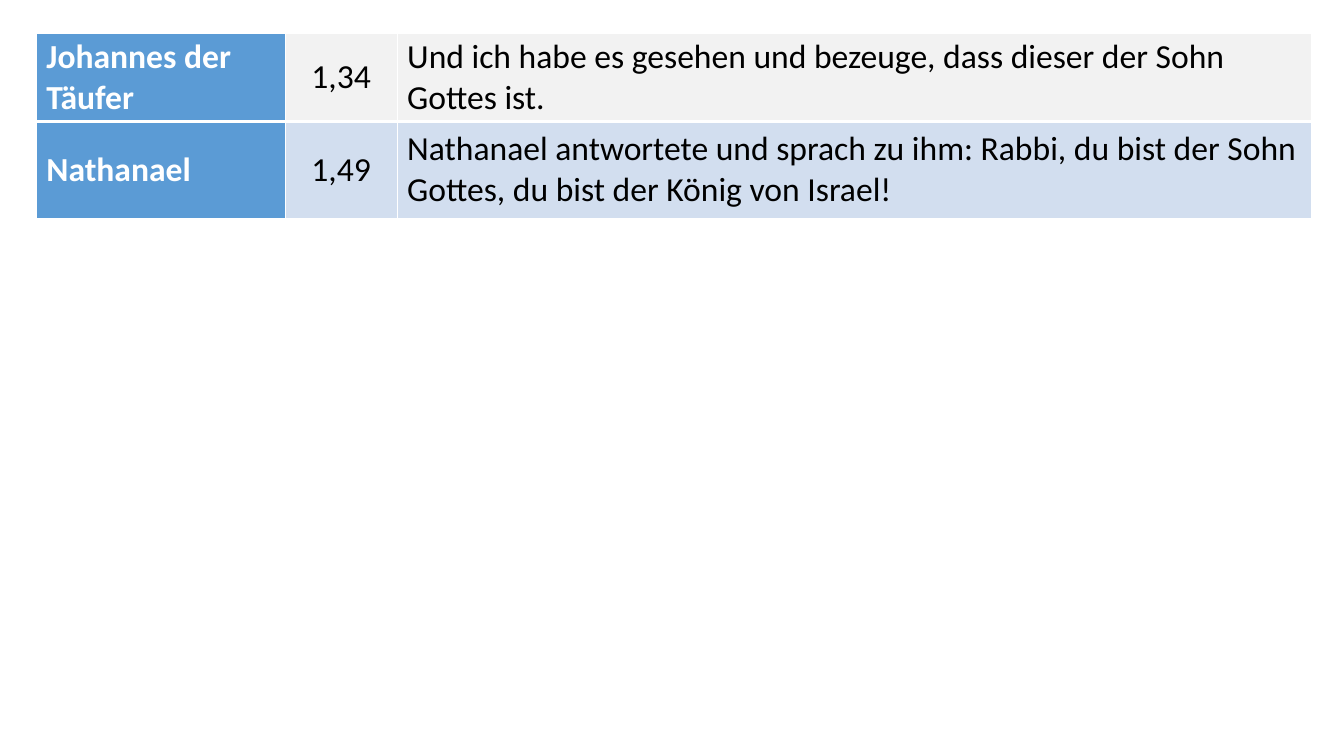
from lxml import etree
from pptx import Presentation
from pptx.dml.color import RGBColor
from pptx.enum.text import MSO_ANCHOR, PP_ALIGN
from pptx.oxml.ns import qn
from pptx.util import Cm, Pt

MIDDLE = MSO_ANCHOR.MIDDLE
LEFT, CENTER = PP_ALIGN.LEFT, PP_ALIGN.CENTER

WHITE, BLACK = "FFFFFF", "000000"
SPEAKER_FILL = "5B9BD5"
ROW_FILLS = ["F2F2F2", "D2DEEF"]
COLUMN_SHARES = [0.195, 0.088, 0.717]
ROW_SHARES = [0.475, 0.525]

TESTIMONIES = [
    ("Johannes der Täufer", "1,34",
     "Und ich habe es gesehen und bezeuge, dass dieser der Sohn Gottes ist."),
    ("Nathanael", "1,49",
     "Nathanael antwortete und sprach zu ihm: Rabbi, du bist der Sohn Gottes, "
     "du bist der König von Israel!"),
]


def rgb(value):
    return RGBColor.from_string(value)


def set_borders(cell, top, bottom):
    """Draw white cell edges: 1 pt at the sides, the given points above and below."""
    properties = cell._tc.get_or_add_tcPr()
    for edge, points in (("L", 1), ("R", 1), ("T", top), ("B", bottom)):
        line = etree.SubElement(properties, qn(f"a:ln{edge}"), w=str(Pt(points)))
        line_fill = etree.SubElement(line, qn("a:solidFill"))
        etree.SubElement(line_fill, qn("a:srgbClr"), val=WHITE)


def fill_cell(cell, content, fill, color, bold, alignment):
    cell.fill.solid()
    cell.fill.fore_color.rgb = rgb(fill)
    cell.vertical_anchor = MIDDLE
    cell.margin_left = cell.margin_right = Cm(0.25)
    cell.margin_top = cell.margin_bottom = 0
    paragraph = cell.text_frame.paragraphs[0]
    paragraph.text = content
    paragraph.alignment = alignment
    font = paragraph.runs[0].font
    font.name, font.size, font.bold = "Calibri", Pt(24), bold
    font.color.rgb = rgb(color)


def add_testimony_table(slide, left, top, width, height):
    table = slide.shapes.add_table(
        len(TESTIMONIES), len(COLUMN_SHARES), left, top, width, height).table
    for column, share in zip(table.columns, COLUMN_SHARES):
        column.width = round(width * share)
    for row, share in zip(table.rows, ROW_SHARES):
        row.height = round(height * share)

    for index, (testimony, row_fill) in enumerate(zip(TESTIMONIES, ROW_FILLS)):
        is_first = index == 0
        speaker, verse, quote = table.rows[index].cells
        for cell in (speaker, verse, quote):
            set_borders(cell, top=1 if is_first else 3, bottom=3 if is_first else 1)
        fill_cell(speaker, testimony[0], SPEAKER_FILL, WHITE, True, LEFT)
        fill_cell(verse, testimony[1], row_fill, BLACK, False, CENTER)
        fill_cell(quote, testimony[2], row_fill, BLACK, False, LEFT)


def main():
    presentation = Presentation()
    presentation.slide_width, presentation.slide_height = Cm(33.87), Cm(19.05)
    slide = presentation.slides.add_slide(presentation.slide_layouts[6])
    add_testimony_table(slide, Cm(0.92), Cm(0.85), Cm(32.13), Cm(4.65))
    presentation.save("out.pptx")


if __name__ == "__main__":
    main()
